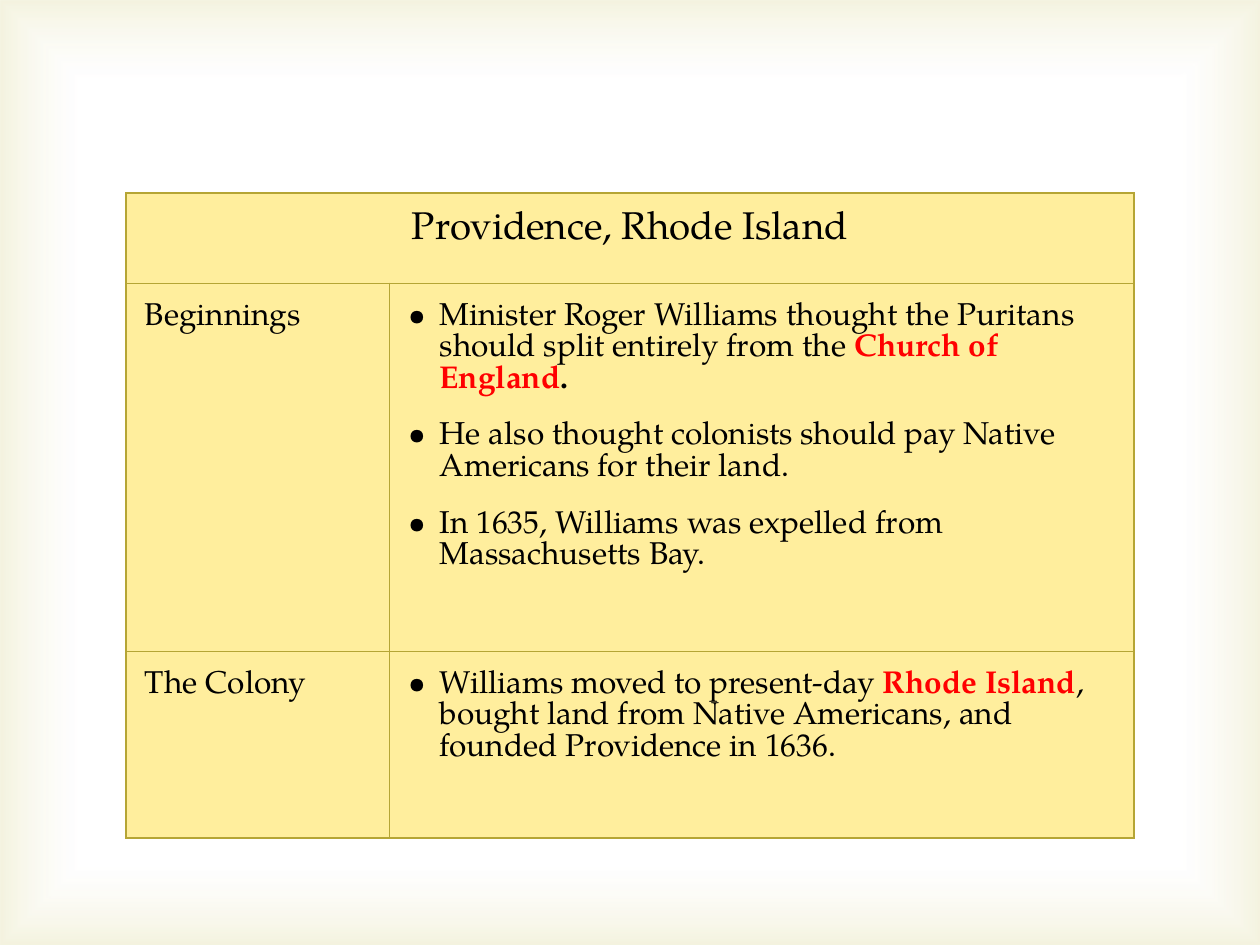
from lxml.etree import SubElement
from pptx import Presentation
from pptx.dml.color import RGBColor
from pptx.enum.shapes import MSO_SHAPE
from pptx.enum.text import PP_ALIGN
from pptx.oxml import parse_xml
from pptx.oxml.ns import nsdecls, qn
from pptx.util import Inches, Pt

FONT = "TeX Gyre Pagella"
INK, ACCENT, CELL, BORDER = "000000", "FF0000", "FFEE9D", "B5A535"
ROWS = [
    ("Beginnings", [
        [("Minister Roger Williams thought the Puritans should split entirely from the ", INK, False),
         ("Church of England", ACCENT, True), (".", INK, True)],
        [("He also thought colonists should pay Native Americans for their land.", INK, False)],
        [("In 1635, Williams was expelled from Massachusetts Bay.", INK, False)],
    ]),
    ("The Colony", [
        [("Williams moved to present-day ", INK, False), ("Rhode Island", ACCENT, True),
         (", bought land from Native Americans, and founded Providence in 1636.", INK, False)],
    ]),
]


def color(value):
    return RGBColor.from_string(value)


def add_glow(slide, width, height):
    glow = slide.shapes.add_shape(MSO_SHAPE.RECTANGLE, 0, 0, width, height)
    glow.shadow.inherit = False
    glow.line.fill.background()
    glow.fill.gradient()
    gradient = glow._element.spPr.find(qn("a:gradFill"))
    gradient.getparent().replace(gradient, parse_xml(
        f'<a:gradFill {nsdecls("a")} rotWithShape="1"><a:gsLst>'
        '<a:gs pos="83000"><a:srgbClr val="FFFFFF"><a:alpha val="11000"/></a:srgbClr></a:gs>'
        '<a:gs pos="100000"><a:srgbClr val="D1CA75"><a:alpha val="23000"/></a:srgbClr></a:gs>'
        '</a:gsLst><a:path path="rect">'
        '<a:fillToRect l="50000" t="50000" r="50000" b="50000"/></a:path></a:gradFill>'))


def style_cell(cell):
    cell.margin_left = cell.margin_right = Inches(0.15)
    cell.margin_top = cell.margin_bottom = Inches(0.15)
    properties = cell._tc.get_or_add_tcPr()
    for side in ("lnL", "lnR", "lnT", "lnB"):
        properties.append(parse_xml(
            f'<a:{side} {nsdecls("a")} w="{Pt(1)}"><a:solidFill>'
            f'<a:srgbClr val="{BORDER}"/></a:solidFill></a:{side}>'))
    cell.fill.solid()
    cell.fill.fore_color.rgb = color(CELL)


def add_bullet(paragraph):
    properties = paragraph._p.get_or_add_pPr()
    properties.set("marL", str(Inches(0.25)))
    properties.set("indent", str(-Inches(0.25)))
    paragraph.space_after = Pt(10.8)
    SubElement(properties, qn("a:buFont")).set("typeface", FONT)
    SubElement(properties, qn("a:buChar")).set("char", "•")


def write_cell(cell, paragraphs, size=18, bulleted=False, align=PP_ALIGN.LEFT):
    frame = cell.text_frame
    for index, runs in enumerate(paragraphs):
        paragraph = frame.add_paragraph() if index else frame.paragraphs[0]
        paragraph.alignment = align
        paragraph.space_before = Pt(3.6 if index else 0)
        if bulleted:
            add_bullet(paragraph)
        for text, ink, bold in runs:
            run = paragraph.add_run()
            run.text = text
            run.font.name = FONT
            run.font.size = Pt(size)
            run.font.bold = bold
            run.font.color.rgb = color(ink)


def add_colony_table(slide):
    table = slide.shapes.add_table(
        3, 2, Inches(1), Inches(1.53), Inches(8), Inches(5.12)).table
    table.first_row = table.horz_banding = False
    for column, width in zip(table.columns, (2.09, 5.91)):
        column.width = Inches(width)
    for row, height in zip(table.rows, (0.72, 2.92, 1.48)):
        row.height = Inches(height)
    for cell in table.iter_cells():
        style_cell(cell)
    title = table.cell(0, 0)
    title.merge(table.cell(0, 1))
    write_cell(title, [[("Providence, Rhode Island", INK, False)]], size=22, align=PP_ALIGN.CENTER)
    for index, (topic, facts) in enumerate(ROWS, start=1):
        write_cell(table.cell(index, 0), [[(topic, INK, False)]])
        write_cell(table.cell(index, 1), facts, bulleted=True)


def main():
    deck = Presentation()
    deck.slide_width, deck.slide_height = Inches(10), Inches(7.5)
    slide = deck.slides.add_slide(deck.slide_layouts[6])
    slide.background.fill.solid()
    slide.background.fill.fore_color.rgb = color("FFFFFF")
    add_glow(slide, deck.slide_width, deck.slide_height)
    add_colony_table(slide)
    deck.save("out.pptx")


if __name__ == "__main__":
    main()
